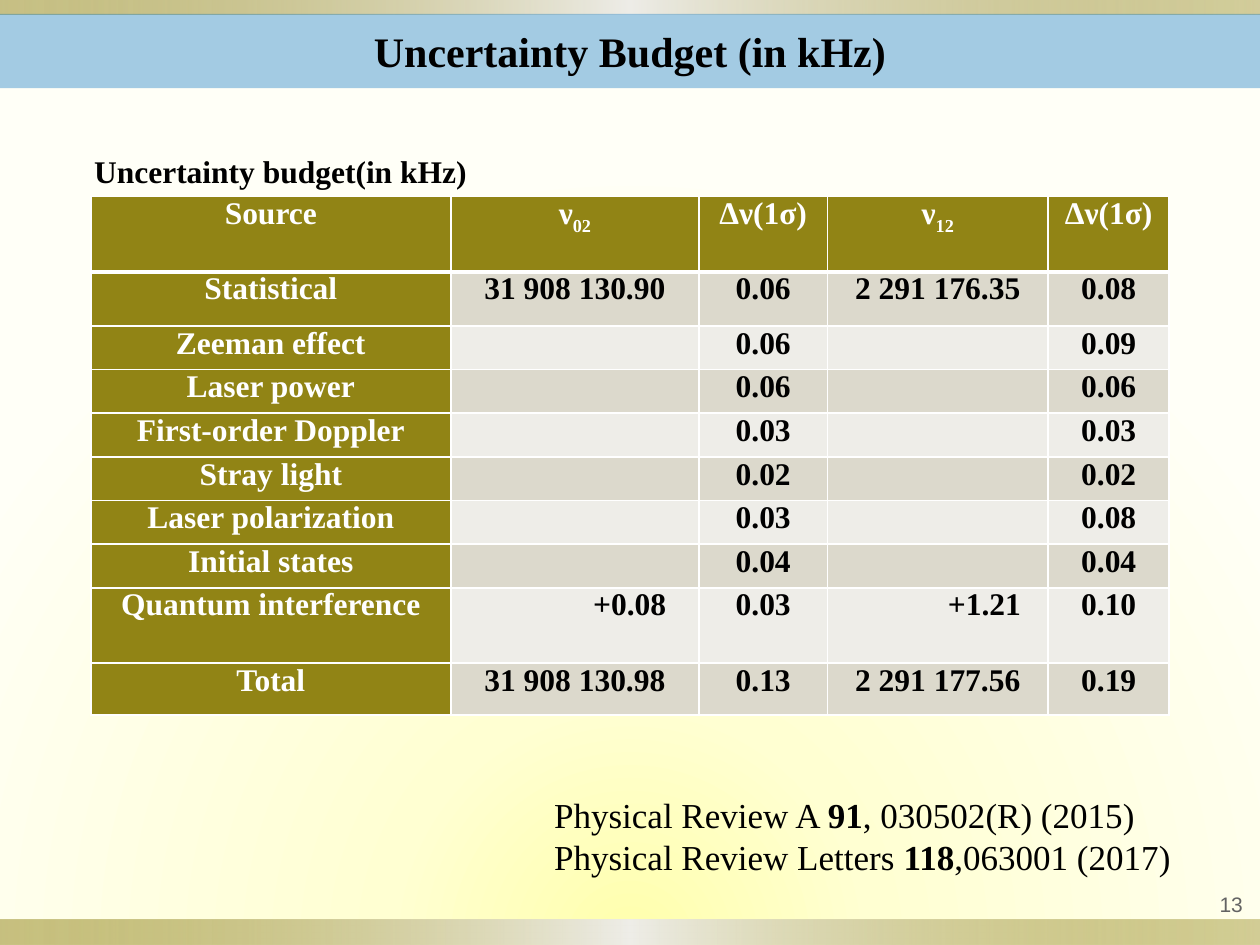
"""Build the uncertainty budget slide with its table and journal references."""
from dataclasses import dataclass

from lxml import etree
from pptx import Presentation
from pptx.dml.color import RGBColor
from pptx.enum.shapes import MSO_SHAPE
from pptx.enum.text import MSO_ANCHOR, PP_ALIGN
from pptx.oxml.ns import qn
from pptx.util import Cm, Pt

RECTANGLE = MSO_SHAPE.RECTANGLE
MIDDLE = MSO_ANCHOR.MIDDLE
TOP = MSO_ANCHOR.TOP
LEFT = PP_ALIGN.LEFT
CENTER = PP_ALIGN.CENTER
RIGHT = PP_ALIGN.RIGHT


@dataclass(frozen=True)
class Theme:
    serif: str = "Times New Roman"
    sans: str = "Arial"
    black: str = "000000"
    white: str = "FFFFFF"
    grey: str = "636363"
    olive: str = "918415"
    silver: str = "EEEDE8"
    band: str = "DCD9CC"
    blue: str = "0070C0"
    glow: tuple = ("FFFFAC", "FFFFD2", "FFFFF7")
    title_size: int = 24
    reference_size: int = 20
    table_size: int = 18
    number_size: int = 12


THEME = Theme()


@dataclass(frozen=True)
class Box:
    left: float
    top: float
    width: float
    height: float

    def lengths(self) -> tuple:
        return tuple(Cm(value) for value in (self.left, self.top, self.width, self.height))


@dataclass(frozen=True)
class Style:
    size: int
    color: str = THEME.black
    bold: bool = False
    font: str = THEME.serif


@dataclass(frozen=True)
class Piece:
    text: str
    bold: bool = False
    subscript: bool = False


@dataclass(frozen=True)
class Stop:
    position: int
    color: str
    alpha: int = 100


@dataclass(frozen=True)
class Column:
    width: float
    correction_margin: float = 0.28


@dataclass(frozen=True)
class Row:
    height: float
    cells: tuple


COLUMNS = (Column(7.26), Column(5), Column(2.59), Column(4.45), Column(2.44))
SHIFT = "Δν(1σ)"
PLAIN_ROW = 0.88
ROWS = (
    Row(1.52, ("Source", (Piece("ν"), Piece("02", subscript=True)), SHIFT,
               (Piece("ν"), Piece("12", subscript=True)), SHIFT)),
    Row(1.09, ("Statistical", "31 908 130.90", "0.06", "2 291 176.35", "0.08")),
    Row(PLAIN_ROW, ("Zeeman effect", "", "0.06", "", "0.09")),
    Row(PLAIN_ROW, ("Laser power", "", "0.06", "", "0.06")),
    Row(PLAIN_ROW, ("First-order Doppler", "", "0.03", "", "0.03")),
    Row(PLAIN_ROW, ("Stray light", "", "0.02", "", "0.02")),
    Row(PLAIN_ROW, ("Laser polarization", "", "0.03", "", "0.08")),
    Row(PLAIN_ROW, ("Initial states", "", "0.04", "", "0.04")),
    Row(1.52, ("Quantum interference", "+0.08", "0.03", "+1.21", "0.10")),
    Row(1.04, ("Total", "31 908 130.98", "0.13", "2 291 177.56", "0.19")),
)
COLUMNS = tuple(Column(column.width, {1: 0.66, 3: 0.55}.get(index, 0.28))
                for index, column in enumerate(COLUMNS))
REFERENCES = (
    (Piece("Physical Review A "), Piece("91", bold=True), Piece(", 030502(R) (2015)")),
    (Piece("Physical Review Letters "), Piece("118", bold=True), Piece(",063001 (2017)")),
)


def add_color(parent, color: str, alpha: int = 100) -> None:
    element = etree.SubElement(parent, qn("a:srgbClr"), val=color)
    if alpha < 100:
        etree.SubElement(element, qn("a:alpha"), val=str(alpha * 1000))


def set_gradient(owner, stops: tuple, radial: bool = False) -> None:
    gradient = next(owner.iter(qn("a:gradFill")))
    for child in list(gradient):
        gradient.remove(child)
    stop_list = etree.SubElement(gradient, qn("a:gsLst"))
    for stop in stops:
        element = etree.SubElement(stop_list, qn("a:gs"), pos=str(stop.position * 1000))
        add_color(element, stop.color, stop.alpha)
    if radial:
        circle = etree.SubElement(gradient, qn("a:path"), path="circle")
        etree.SubElement(circle, qn("a:fillToRect"), l="50000", t="150000", r="50000", b="0")
    else:
        etree.SubElement(gradient, qn("a:lin"), ang="0", scaled="0")


def write_paragraph(paragraph, content, style: Style, alignment=LEFT) -> None:
    pieces = (Piece(content),) if isinstance(content, str) else content
    paragraph.alignment = alignment
    for piece in pieces:
        run = paragraph.add_run()
        run.text = piece.text
        run.font.name = style.font
        run.font.size = Pt(style.size)
        run.font.bold = style.bold or piece.bold
        run.font.color.rgb = RGBColor.from_string(style.color)
        if piece.subscript:
            run.font._element.set("baseline", "-25000")


def add_text(slide, box: Box, lines: tuple, style: Style, alignment=LEFT, anchor=TOP) -> None:
    text_frame = slide.shapes.add_textbox(*box.lengths()).text_frame
    text_frame.vertical_anchor = anchor
    for index, line in enumerate(lines):
        paragraph = text_frame.add_paragraph() if index else text_frame.paragraphs[0]
        write_paragraph(paragraph, line, style, alignment)


def add_band(slide, box: Box):
    shape = slide.shapes.add_shape(RECTANGLE, *box.lengths())
    shape.shadow.inherit = False
    shape.line.fill.background()
    return shape


def add_metal_bar(slide, box: Box) -> None:
    shape = add_band(slide, box)
    shape.fill.gradient()
    set_gradient(shape._element, (Stop(0, THEME.olive, 50), Stop(50, THEME.silver),
                                  Stop(100, THEME.olive, 40)))


def add_title(slide, box: Box, title: str) -> None:
    shape = add_band(slide, box)
    shape.fill.solid()
    shape.fill.fore_color.rgb = RGBColor.from_string(THEME.blue)
    color = next(shape._element.spPr.iter(qn("a:srgbClr")))
    etree.SubElement(color, qn("a:alpha"), val="36000")
    shape.text_frame.vertical_anchor = MIDDLE
    write_paragraph(shape.text_frame.paragraphs[0], title,
                    Style(THEME.title_size, bold=True), CENTER)


def set_borders(cell, row_index: int) -> None:
    properties = cell._tc.get_or_add_tcPr()
    thick_edge = {0: "lnB", 1: "lnT"}.get(row_index)
    for position, edge in enumerate(("lnL", "lnR", "lnT", "lnB")):
        line = etree.Element(qn(f"a:{edge}"), w=str(Pt(3 if edge == thick_edge else 1)))
        add_color(etree.SubElement(line, qn("a:solidFill")), THEME.white)
        properties.insert(position, line)


def add_budget_table(slide, box: Box) -> None:
    table = slide.shapes.add_table(len(ROWS), len(COLUMNS), *box.lengths()).table
    for index, column in enumerate(COLUMNS):
        table.columns[index].width = Cm(column.width)
    for row_index, row in enumerate(ROWS):
        table.rows[row_index].height = Cm(row.height)
        for column_index, content in enumerate(row.cells):
            cell = table.cell(row_index, column_index)
            heading = row_index == 0 or column_index == 0
            correction = content[:1] == "+"
            cell.margin_top = cell.margin_bottom = 0
            cell.margin_left = Cm(0.28)
            cell.margin_right = Cm(COLUMNS[column_index].correction_margin if correction else 0.28)
            set_borders(cell, row_index)
            fill = THEME.olive if heading else (THEME.silver, THEME.band)[row_index % 2]
            cell.fill.solid()
            cell.fill.fore_color.rgb = RGBColor.from_string(fill)
            if content:
                color = THEME.white if heading else THEME.black
                write_paragraph(cell.text_frame.paragraphs[0], content,
                                Style(THEME.table_size, color, True),
                                RIGHT if correction else CENTER)


def main() -> None:
    presentation = Presentation()
    presentation.slide_width, presentation.slide_height = Cm(25.4), Cm(19.05)
    slide = presentation.slides.add_slide(presentation.slide_layouts[6])
    slide.background.fill.gradient()
    set_gradient(slide._element, tuple(map(Stop, (0, 31, 100), THEME.glow)), radial=True)
    add_metal_bar(slide, Box(0, 18.54, 25.4, 0.51))
    add_metal_bar(slide, Box(0, 0, 25.4, 0.3))
    add_text(slide, Box(23.55, 17.83, 2.54, 0.79), ("13",),
             Style(THEME.number_size, THEME.grey, font=THEME.sans), CENTER, MIDDLE)
    add_title(slide, Box(0, 0.28, 25.4, 1.5), "Uncertainty Budget (in kHz)")
    add_text(slide, Box(1.65, 2.95, 8.1, 1.02), ("Uncertainty budget(in kHz)",),
             Style(THEME.table_size, bold=True))
    add_budget_table(slide, Box(1.83, 3.96, 21.74, 10.49))
    add_text(slide, Box(10.92, 15.88, 13.03, 2.74), REFERENCES, Style(THEME.reference_size))
    presentation.save("out.pptx")


if __name__ == "__main__":
    main()
